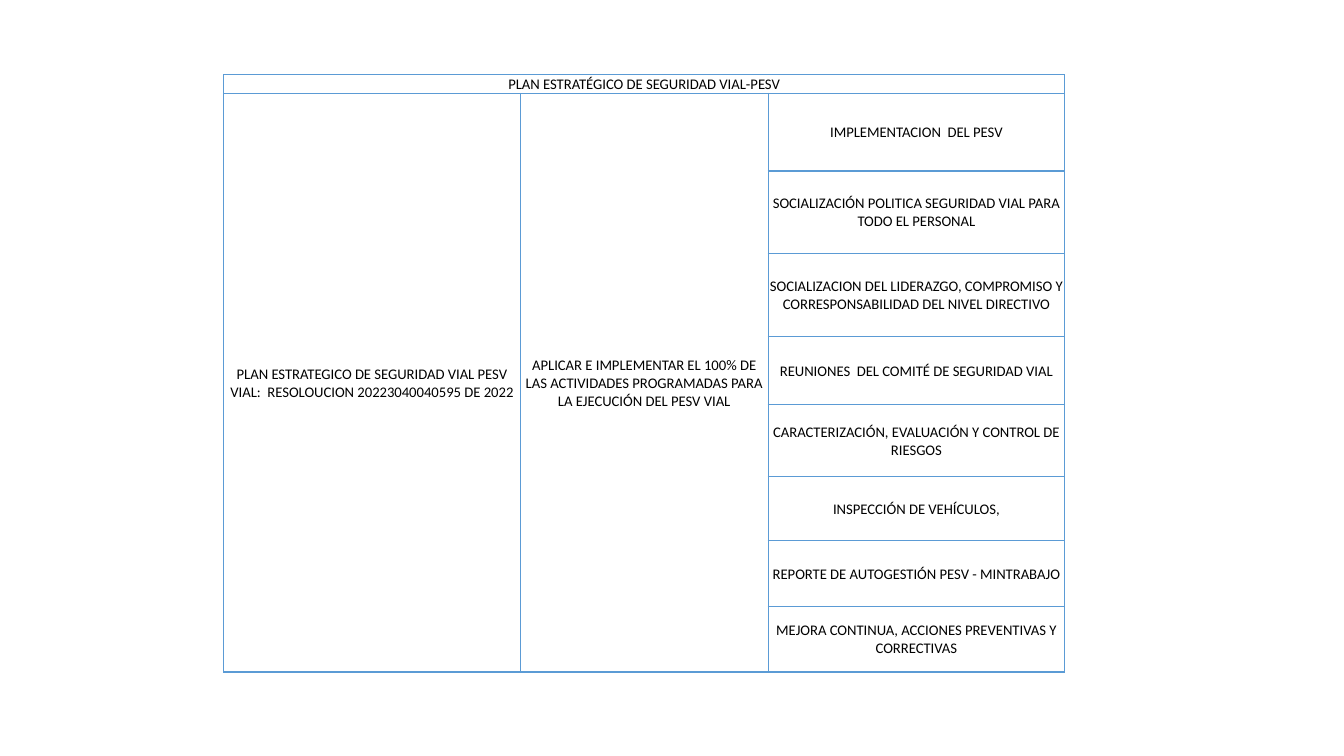
"""Build the slide with the road safety plan table."""
from dataclasses import dataclass

import pptx
import pptx.dml.color
import pptx.enum.text
import pptx.oxml
import pptx.oxml.ns
import pptx.util
from pptx.util import Inches


@dataclass(frozen=True)
class Theme:
    """Colours, type and line sizes of the slide."""
    font: str = "Calibri"
    text_size: float = 10.5
    text_color: str = "000000"
    border_color: str = "5B9BD5"
    border_width: float = 1


THEME = Theme()
HEADING = "PLAN ESTRATÉGICO DE SEGURIDAD VIAL-PESV"
PLAN = "PLAN ESTRATEGICO DE SEGURIDAD VIAL PESV VIAL:  RESOLOUCION 20223040040595 DE 2022"
GOAL = "APLICAR E IMPLEMENTAR EL 100% DE LAS ACTIVIDADES PROGRAMADAS PARA LA EJECUCIÓN DEL PESV VIAL"
ACTIVITIES = [
    ("IMPLEMENTACION  DEL PESV", 0.77),
    ("SOCIALIZACIÓN POLITICA SEGURIDAD VIAL PARA TODO EL PERSONAL", 0.82),
    ("SOCIALIZACION DEL LIDERAZGO, COMPROMISO Y CORRESPONSABILIDAD DEL NIVEL DIRECTIVO", 0.82),
    ("REUNIONES  DEL COMITÉ DE SEGURIDAD VIAL", 0.68),
    ("CARACTERIZACIÓN, EVALUACIÓN Y CONTROL DE RIESGOS", 0.71),
    ("INSPECCIÓN DE VEHÍCULOS,", 0.64),
    ("REPORTE DE AUTOGESTIÓN PESV - MINTRABAJO", 0.65),
    ("MEJORA CONTINUA, ACCIONES PREVENTIVAS Y CORRECTIVAS", 0.65),
]
COLUMN_WIDTHS = [2.94, 2.46, 2.94]
ROW_HEIGHTS = [0.14] + [height for _, height in ACTIVITIES]


def add_borders(cell):
    """Draw the four borders of a cell."""
    properties = cell._tc.get_or_add_tcPr()
    width = pptx.util.Pt(THEME.border_width)
    for side in ("lnL", "lnR", "lnT", "lnB"):
        properties.append(pptx.oxml.parse_xml(
            f'<a:{side} {pptx.oxml.ns.nsdecls("a")} w="{width}"><a:solidFill>'
            f'<a:srgbClr val="{THEME.border_color}"/></a:solidFill></a:{side}>'))


def style_cell(cell):
    """Give a cell its borders, margins and empty fill."""
    add_borders(cell)
    cell.fill.background()
    cell.vertical_anchor = pptx.enum.text.MSO_ANCHOR.MIDDLE
    cell.margin_left = cell.margin_right = cell.margin_top = Inches(0.01)
    cell.margin_bottom = 0
    cell.text_frame.paragraphs[0].font.size = pptx.util.Pt(THEME.text_size)


def write_cell(cell, text):
    """Write centred text in a cell."""
    cell.text_frame.text = text
    paragraph = cell.text_frame.paragraphs[0]
    paragraph.alignment = pptx.enum.text.PP_ALIGN.CENTER
    font = paragraph.runs[0].font
    font.name = THEME.font
    font.size = pptx.util.Pt(THEME.text_size)
    font.bold = False
    font.color.rgb = pptx.dml.color.RGBColor.from_string(THEME.text_color)


def add_grid(slide):
    """Add the bordered table with its columns and rows sized."""
    grid = slide.shapes.add_table(
        len(ROW_HEIGHTS), len(COLUMN_WIDTHS), Inches(2.22), Inches(0.74),
        Inches(sum(COLUMN_WIDTHS)), Inches(sum(ROW_HEIGHTS))).table
    grid.first_row = grid.horz_banding = False
    for column, width in zip(grid.columns, COLUMN_WIDTHS):
        column.width = Inches(width)
    for row, height in zip(grid.rows, ROW_HEIGHTS):
        row.height = Inches(height)
    for cell in grid.iter_cells():
        style_cell(cell)
    return grid


def main():
    """Build and save the slide."""
    deck = pptx.Presentation()
    deck.slide_width, deck.slide_height = Inches(13.33), Inches(7.5)
    slide = deck.slides.add_slide(deck.slide_layouts[6])
    plan_table = add_grid(slide)

    plan_table.cell(0, 0).merge(plan_table.cell(0, 2))
    write_cell(plan_table.cell(0, 0), HEADING)
    for column, text in enumerate((PLAN, GOAL)):
        plan_table.cell(1, column).merge(plan_table.cell(len(ACTIVITIES), column))
        write_cell(plan_table.cell(1, column), text)
    for row, (activity, _) in enumerate(ACTIVITIES, start=1):
        write_cell(plan_table.cell(row, 2), activity)

    deck.save("out.pptx")


if __name__ == "__main__":
    main()
